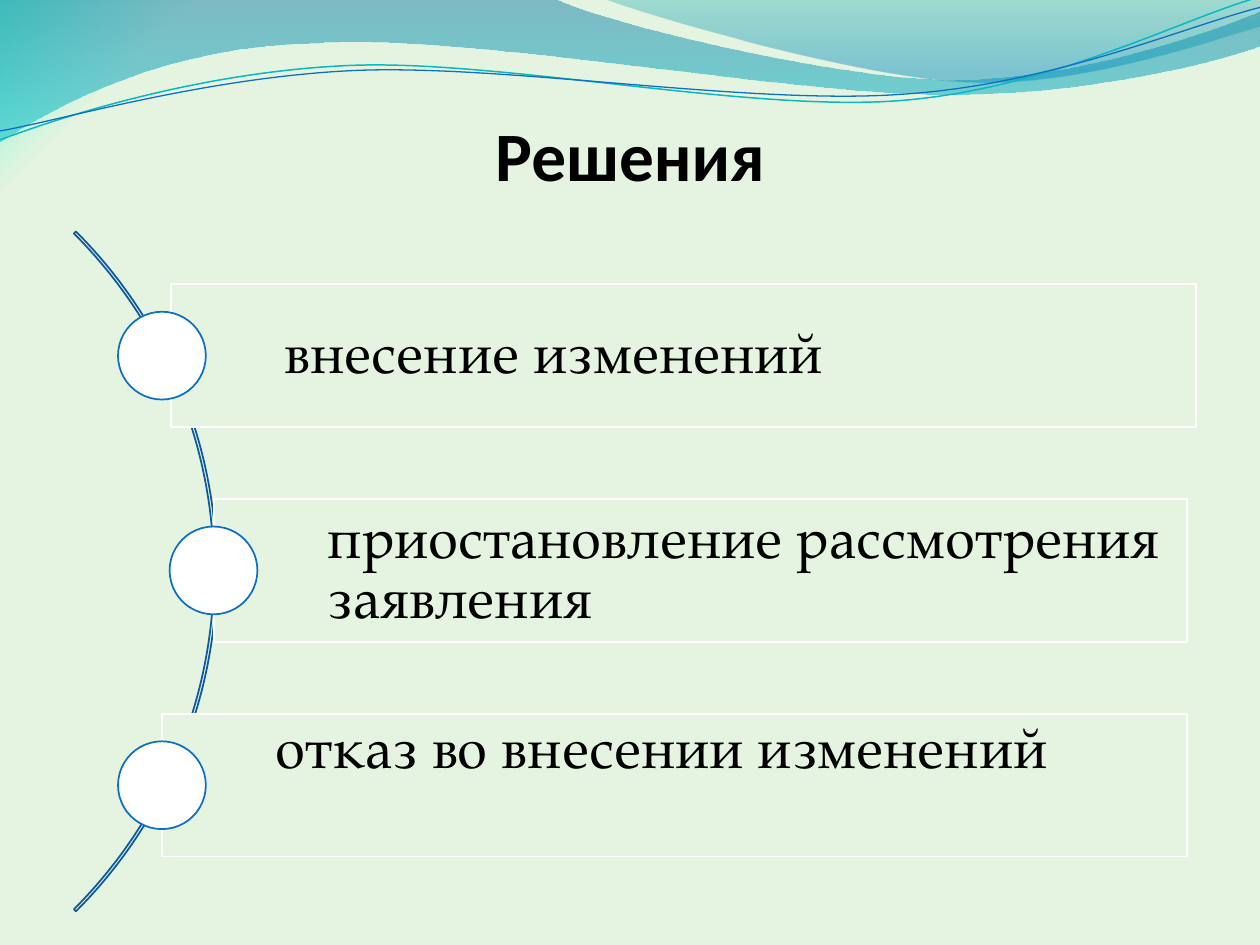
import math

import pptx
import pptx.util
import pptx.dml.color
import pptx.enum.shapes
import pptx.enum.text
import pptx.oxml
import pptx.oxml.ns
from pptx.util import Cm, Pt

COLORS = {
    "page": "E5F4E0", "glow": "74F4D1", "ink": "000000", "white": "FFFFFF",
    "dot_line": "0F6FC6", "arc": "0C599F", "teal_line": "0AB8BF",
    "deep_blue": "0074A1", "cyan": "00C6CF", "sea": "00A1A9", "azure": "008BBF",
}
HEADING = "Решения"
# text, box left, box width, circle left (cm), vertical anchor, top inset (cm)
DECISIONS = [
    ("внесение изменений", 3.45, 20.66, 2.38, "MIDDLE", 0.23),
    ("приостановление рассмотрения заявления", 4.32, 19.61, 3.42, "MIDDLE", 0.23),
    ("отказ во внесении изменений", 3.27, 20.66, 2.38, "TOP", 0.13),
]
FIRST_TOP, PITCH, BOX_HEIGHT, CIRCLE = 5.73, 4.33, 2.88, 1.77

# Outlines in cm: pairs are straight segments, sixes are Bezier curves.
# Gradient stops: position %, colour, opacity %.
BANDS = [
    ([(0, 0), (11.18, -0.03), (12.09, 0.43, 16.87, 1.6, 19.25, 1.6),
      (21.67, 1.6, 24.33, 0.66, 25.4, 0.23), (25.43, 0.91),
      (24.97, 1.12, 22.1, 1.93, 18.95, 1.9), (15.8, 1.9, 9.7, 0.71, 6.53, 0.86),
      (3.28, 0.91, 1.17, 2.11, -0.03, 2.87), (0, 0)],
     [(0, "deep_blue", 45), (100, "cyan", 55)]),
    ([(12.17, -0.03), (12.93, 0.28, 17.32, 1.57, 19.53, 1.65),
      (21.74, 1.75, 24.41, 0.81, 25.4, 0.53), (25.4, 0), (12.17, -0.03)],
     [(0, "sea", 30), (80, "azure", 45)]),
]
# outline as it appears after tilting, centre of tilt, colour, width
STRANDS = [
    ([(0, 2.82), (1.22, 2.36, 4.01, 1.45, 7.04, 1.32),
      (10.03, 1.19, 15.06, 2.26, 18.11, 2.03),
      (21.16, 1.8, 23.83, 0.38, 25.35, -0.05)], (12.67, 1.46), "teal_line", 0.85),
    ([(0, 2.64), (1.19, 2.44, 4.17, 1.55, 7.19, 1.42),
      (10.24, 1.3, 15.16, 2.13, 18.21, 1.9),
      (21.23, 1.7, 23.9, 0.53, 25.4, 0.15)], (12.69, 1.5), "dot_line", 0.75),
]
TILT = -2.7


def rgb(name):
    return pptx.dml.color.RGBColor.from_string(COLORS[name])


def gradient(stops, direction):
    stop_xml = "".join(
        f'<a:gs pos="{pos * 1000}"><a:srgbClr val="{COLORS[color]}">'
        f'<a:alpha val="{opacity * 1000}"/></a:srgbClr></a:gs>'
        for pos, color, opacity in stops)
    return pptx.oxml.parse_xml(
        f'<a:gradFill {pptx.oxml.ns.nsdecls("a")} rotWithShape="1">'
        f'<a:gsLst>{stop_xml}</a:gsLst>{direction}</a:gradFill>')


def replace_solid_fill(fill, parent, new_fill):
    """Swap a solid fill under parent for a gradient, keeping its position."""
    fill.solid()
    parent.replace(parent.find(pptx.oxml.ns.qn("a:solidFill")), new_fill)


def level(outline, centre):
    """Undo the tilt around centre, so that the shape can carry it as rotation."""
    cos, sin = math.cos(math.radians(-TILT)), math.sin(math.radians(-TILT))
    cx, cy = centre
    return [tuple(value for x, y in zip(segment[::2], segment[1::2])
                  for value in (cx + (x - cx) * cos - (y - cy) * sin,
                                cy + (x - cx) * sin + (y - cy) * cos))
            for segment in outline]


def add_outline(slide, outline, close):
    """Build straight segments, then join the triples that stand for curves."""
    points = [(Cm(x), Cm(y)) for segment in outline
              for x, y in zip(segment[::2], segment[1::2])]
    builder = slide.shapes.build_freeform(*points[0])
    builder.add_line_segments(points[1:], close=close)
    shape = builder.convert_to_shape()
    lines = iter(list(shape.element.iter(pptx.oxml.ns.qn("a:lnTo"))))
    for segment in outline[1:]:
        first = next(lines)
        if len(segment) == 6:
            curve = pptx.oxml.parse_xml(
                f'<a:cubicBezTo {pptx.oxml.ns.nsdecls("a")}/>')
            first.addprevious(curve)
            for line in (first, next(lines), next(lines)):
                curve.append(line[0])
                line.getparent().remove(line)
    return shape


def style(shape, fill=None, line=None, width=1):
    shape.shadow.inherit = False
    if fill:
        shape.fill.solid()
        shape.fill.fore_color.rgb = rgb(fill)
    else:
        shape.fill.background()
    if line:
        shape.line.color.rgb = rgb(line)
        shape.line.width = Pt(width)
    else:
        shape.line.fill.background()


def add_preset(slide, kind, *box):
    preset = getattr(pptx.enum.shapes.MSO_SHAPE, kind)
    return slide.shapes.add_shape(preset, *(Cm(value) for value in box))


def write(shape, text, font, size, align, anchor, insets, bold=False):
    frame = shape.text_frame
    frame.text = text
    frame.word_wrap = True
    frame.vertical_anchor = getattr(pptx.enum.text.MSO_ANCHOR, anchor)
    (frame.margin_left, frame.margin_top,
     frame.margin_right, frame.margin_bottom) = (Cm(value) for value in insets)
    paragraph = frame.paragraphs[0]
    paragraph.alignment = getattr(pptx.enum.text.PP_ALIGN, align)
    run_font = paragraph.runs[0].font
    run_font.name, run_font.size, run_font.bold = font, Pt(size), bold
    run_font.color.rgb = rgb("ink")
    return paragraph


def add_backdrop(slide):
    fill = slide.background.fill
    fill.solid()
    background = slide.element.find(".//" + pptx.oxml.ns.qn("p:bgPr"))
    replace_solid_fill(fill, background, gradient(
        [(91, "page", 100), (100, "glow", 91)],
        '<a:path path="circle"><a:fillToRect l="100000" t="100000"/></a:path>'))
    for outline, stops in BANDS:
        band = add_outline(slide, outline, True)
        style(band)
        replace_solid_fill(band.fill, band.element.spPr,
                           gradient(stops, '<a:lin ang="5400000" scaled="0"/>'))
    for outline, centre, color, width in STRANDS:
        strand = add_outline(slide, level(outline, centre), False)
        strand.rotation = TILT
        style(strand, line=color, width=width)


def add_decisions(slide):
    arc = add_preset(slide, "BLOCK_ARC", -15.01, 1.83, 19.38, 19.38)
    for index, value in enumerate((189, 27, 0.003)):
        arc.adjustments[index] = value
    style(arc, line="arc")
    for index, (text, left, width, circle_left, anchor, inset) in enumerate(DECISIONS):
        top = FIRST_TOP + index * PITCH
        box = add_preset(slide, "RECTANGLE", left, top, width, BOX_HEIGHT)
        style(box, "page", "white")
        paragraph = write(box, text, "TeX Gyre Pagella", 32, "LEFT", anchor,
                          (2.29, inset, 0.23, 0.23))
        paragraph.line_spacing = 0.9
        circle = add_preset(slide, "OVAL", circle_left,
                            top + (BOX_HEIGHT - CIRCLE) / 2, CIRCLE, CIRCLE)
        style(circle, "white", "dot_line")


def main():
    deck = pptx.Presentation()
    deck.slide_width, deck.slide_height = Cm(25.4), Cm(19.05)
    slide = deck.slides.add_slide(deck.slide_layouts[6])
    add_backdrop(slide)
    heading = slide.shapes.add_textbox(Cm(1.27), Cm(1.95), Cm(22.86), Cm(1.98))
    write(heading, HEADING, "Calibri", 39.6, "CENTER", "BOTTOM", (0, 0.13, 0, 0), bold=True)
    add_decisions(slide)
    deck.save("out.pptx")


if __name__ == "__main__":
    main()
